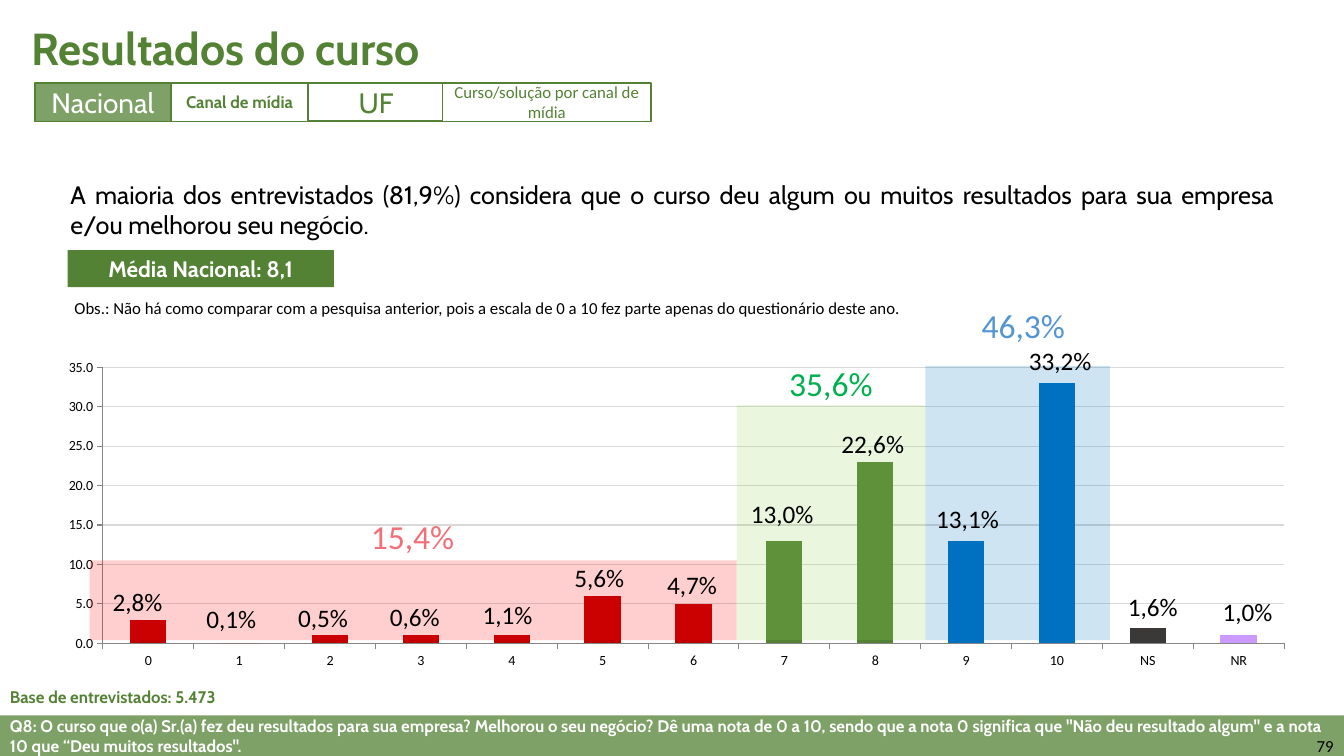
from dataclasses import dataclass

from lxml import etree
from pptx import Presentation
from pptx.chart.data import CategoryChartData
from pptx.dml.color import RGBColor
from pptx.enum.chart import XL_CHART_TYPE, XL_TICK_MARK
from pptx.enum.shapes import MSO_CONNECTOR, MSO_SHAPE
from pptx.enum.text import MSO_ANCHOR, PP_ALIGN
from pptx.oxml import parse_xml
from pptx.oxml.ns import nsdecls, qn
from pptx.util import Pt

LEFT, CENTER, RIGHT, JUSTIFY = (PP_ALIGN.LEFT, PP_ALIGN.CENTER,
                                PP_ALIGN.RIGHT, PP_ALIGN.JUSTIFY)
TOP, MIDDLE = MSO_ANCHOR.TOP, MSO_ANCHOR.MIDDLE
RECTANGLE, STRAIGHT = MSO_SHAPE.RECTANGLE, MSO_CONNECTOR.STRAIGHT
TICK_OUTSIDE = XL_TICK_MARK.OUTSIDE
GREEN, BLUE, RED, WHITE, BLACK = "548235", "0070C0", "C00000", "FFFFFF", "000000"
CABIN, CALIBRI = "Cabin", "Calibri"


@dataclass
class Box:
    left: float
    top: float
    width: float
    height: float


@dataclass
class Style:
    size: float
    color: str = BLACK
    font: str = CALIBRI
    bold: bool = False
    align: PP_ALIGN = LEFT
    anchor: MSO_ANCHOR = TOP
    wrap: bool = True


@dataclass
class Score:
    name: str
    value: int
    label: str
    color: str
    label_left: float
    label_top: float


@dataclass
class Band:
    box: Box
    color: str
    total: str
    total_left: float
    total_top: float
    total_color: str


@dataclass
class Tab:
    text: str
    box: Box
    fill: str
    opacity: int
    style: Style


SCORES = [
    Score("0", 3, "2,8%", RED, 73.4, 415.4),
    Score("1", 0, "0,1%", RED, 140.4, 427.5),
    Score("2", 1, "0,5%", RED, 205.9, 427),
    Score("3", 1, "0,6%", RED, 271.4, 426.2),
    Score("4", 1, "1,1%", RED, 337.7, 424.8),
    Score("5", 6, "5,6%", RED, 403.2, 398.2),
    Score("6", 5, "4,7%", RED, 469.4, 403.2),
    Score("7", 13, "13,0%", GREEN, 529.2, 352.1),
    Score("8", 23, "22,6%", GREEN, 594, 302.4),
    Score("9", 13, "13,1%", BLUE, 661.7, 355.7),
    Score("10", 33, "33,2%", BLUE, 727.9, 243.4),
    Score("NS", 2, "1,6%", "3B3838", 798.5, 419),
    Score("NR", 1, "1,0%", "CC99FF", 866.2, 422.6),
]

BAND_BOTTOM = 457.2
BANDS = [
    Band(Box(661, 261.4, 131.8, BAND_BOTTOM - 261.4), BLUE,
         "46,3%", 694.1, 214.6, "5395D4"),
    Band(Box(526.3, 289.4, 134.7, BAND_BOTTOM - 289.4), "92D050",
         "35,6%", 556.6, 256, "00B050"),
    Band(Box(64.1, 400.3, 462.2, BAND_BOTTOM - 400.3), "FF0000",
         "15,4%", 257.8, 365, "F26F78"),
]

TAB_LEFT, TAB_TOP, TAB_PITCH, TAB_WIDTH, TAB_HEIGHT = 24.9, 59.4, 97.6, 97.2, 27.2
TABS = [
    Tab("Nacional", Box(TAB_LEFT, TAB_TOP, TAB_WIDTH, TAB_HEIGHT), GREEN, 75,
        Style(20, WHITE, CABIN, False, CENTER, MIDDLE)),
    Tab("UF", Box(TAB_LEFT + 2 * TAB_PITCH, 59.2, TAB_WIDTH, TAB_HEIGHT), WHITE, 75,
        Style(20, GREEN, CABIN, False, CENTER, MIDDLE)),
    Tab("Canal de mídia", Box(TAB_LEFT + TAB_PITCH, TAB_TOP, TAB_WIDTH, TAB_HEIGHT),
        WHITE, 75, Style(12, GREEN, CABIN, True, CENTER, MIDDLE)),
    Tab("Curso/solução por canal de mídia", Box(316.1, TAB_TOP, 149, TAB_HEIGHT),
        WHITE, 100, Style(12, GREEN, CALIBRI, False, CENTER, MIDDLE)),
]


def rgb(color: str) -> RGBColor:
    return RGBColor.from_string(color)


def lengths(box: Box) -> list:
    return [Pt(value) for value in (box.left, box.top, box.width, box.height)]


def write(shape, text: str, style: Style) -> None:
    frame = shape.text_frame
    frame.word_wrap = style.wrap
    frame.vertical_anchor = style.anchor
    paragraph = frame.paragraphs[0]
    paragraph.alignment = style.align
    run = paragraph.add_run()
    run.text = text
    run.font.name, run.font.size, run.font.bold = style.font, Pt(style.size), style.bold
    run.font.color.rgb = rgb(style.color)


def add_text(slide, box: Box, text: str, style: Style) -> None:
    write(slide.shapes.add_textbox(*lengths(box)), text, style)


def add_rectangle(slide, box: Box, fill: str, opacity: int = 100, line: str = ""):
    shape = slide.shapes.add_shape(RECTANGLE, *lengths(box))
    shape.shadow.inherit = False
    shape.fill.solid()
    shape.fill.fore_color.rgb = rgb(fill)
    if opacity < 100:
        color = shape.element.spPr.find(qn("a:solidFill")).find(qn("a:srgbClr"))
        etree.SubElement(color, qn("a:alpha")).set("val", str(opacity * 1000))
    if line:
        shape.line.color.rgb = rgb(line)
        shape.line.width = Pt(1)
    else:
        shape.line.fill.background()
    return shape


def add_tab_divider(slide) -> None:
    divider = slide.shapes.add_connector(STRAIGHT, Pt(201.6), Pt(59.8), Pt(201.6), Pt(86.4))
    divider.line.color.rgb = rgb(WHITE)
    divider.line.width = Pt(0.5)
    etree.SubElement(divider.element.spPr, qn("a:effectLst"))


def add_score_chart(slide) -> None:
    data = CategoryChartData(number_format="0.0")
    data.categories = [score.name for score in SCORES]
    data.add_series("Respostas (%)", [score.value for score in SCORES])
    chart = slide.shapes.add_chart(XL_CHART_TYPE.COLUMN_CLUSTERED,
                                   *lengths(Box(31, 252, 904.3, 230.4)), data).chart
    chart.has_legend = chart.has_title = False
    chart.font.name, chart.font.size = CALIBRI, Pt(10)
    chart.font.color.rgb = rgb(BLACK)

    plot = chart.plots[0]
    plot.gap_width, plot.vary_by_categories = 150, False
    series = plot.series[0]
    series.format.fill.solid()
    series.format.fill.fore_color.rgb = rgb(RED)
    for index, score in enumerate(SCORES):
        if score.color != RED:
            fill = series.points[index].format.fill
            fill.solid()
            fill.fore_color.rgb = rgb(score.color)

    for axis in (chart.category_axis, chart.value_axis):
        axis.major_tick_mark = TICK_OUTSIDE
        axis.format.line.color.rgb = rgb("868686")
        axis.format.line.width = Pt(0.75)
    axis = chart.value_axis
    axis.minimum_scale, axis.maximum_scale, axis.major_unit = 0, 35, 5
    axis.tick_labels.number_format = "0.0"
    axis.tick_labels.number_format_is_linked = False
    axis.major_gridlines.format.line.color.rgb = rgb("D9D9D9")
    axis.major_gridlines.format.line.width = Pt(0.75)

    # Fixed plot area, so that bars line up with bands and labels
    area = chart.element.find(qn("c:chart")).find(qn("c:plotArea"))
    for old_layout in area.findall(qn("c:layout")):
        area.remove(old_layout)
    parts = {"xMode": "edge", "yMode": "edge", "x": 0.047, "y": 0.045,
             "w": 0.933, "h": 0.856}
    settings = "".join(f'<c:{key} val="{value}"/>' for key, value in parts.items())
    area.insert(0, parse_xml(
        f'<c:layout {nsdecls("c")}><c:manualLayout><c:layoutTarget val="inner"/>'
        f'{settings}</c:manualLayout></c:layout>'))


def main() -> None:
    presentation = Presentation()
    presentation.slide_width, presentation.slide_height = Pt(960), Pt(540)
    slide = presentation.slides.add_slide(presentation.slide_layouts[6])

    # Chart with score bands, bar labels and band totals
    add_score_chart(slide)
    for band in BANDS:
        add_rectangle(slide, band.box, band.color, 19)
        add_text(slide, Box(band.total_left, band.total_top, 74.9, 36), band.total,
                 Style(24, band.total_color, wrap=False))
    for score in SCORES:
        add_text(slide, Box(score.label_left, score.label_top, 69.8, 28.8),
                 score.label, Style(18))

    # Title and tabs
    add_text(slide, Box(15.4, 7.9, 934.6, 51.8), "Resultados do curso",
             Style(32, GREEN, CABIN, True, anchor=MIDDLE))
    add_tab_divider(slide)
    for tab in TABS:
        write(add_rectangle(slide, tab.box, tab.fill, tab.opacity, GREEN),
              tab.text, tab.style)

    # Main finding, national average and remark
    add_text(slide, Box(43.2, 124.6, 874, 51.1),
             "A maioria dos entrevistados (81,9%) considera que o curso deu algum ou "
             "muitos resultados para sua empresa e/ou melhorou seu negócio.",
             Style(18, font=CABIN, align=JUSTIFY))
    write(add_rectangle(slide, Box(48.4, 178.6, 190.1, 26.6), GREEN),
          "Média Nacional: 8,1", Style(16, WHITE, CABIN, True, CENTER))
    add_text(slide, Box(46.1, 208.8, 612, 21.6),
             "Obs.: Não há como comparar com a pesquisa anterior, pois a escala de "
             "0 a 10 fez parte apenas do questionário deste ano.", Style(12, wrap=False))

    # Sample size, question and page number
    add_text(slide, Box(0, 487, 165.6, 21.6), "Base de entrevistados: 5.473",
             Style(12, GREEN, CABIN, True, wrap=False))
    write(add_rectangle(slide, Box(0, 511, 960, 29), GREEN, 75),
          "Q8: O curso que o(a) Sr.(a) fez deu resultados para sua empresa? Melhorou o "
          "seu negócio? Dê uma nota de 0 a 10, sendo que a nota 0 significa que \"Não "
          "deu resultado algum\" e a nota 10 que “Deu muitos resultados\".",
          Style(12, WHITE, CABIN, True, anchor=MIDDLE))
    add_text(slide, Box(926.6, 518.4, 33.1, 28.8), "79",
             Style(12, align=RIGHT, anchor=MIDDLE))

    presentation.save("out.pptx")


if __name__ == "__main__":
    main()
